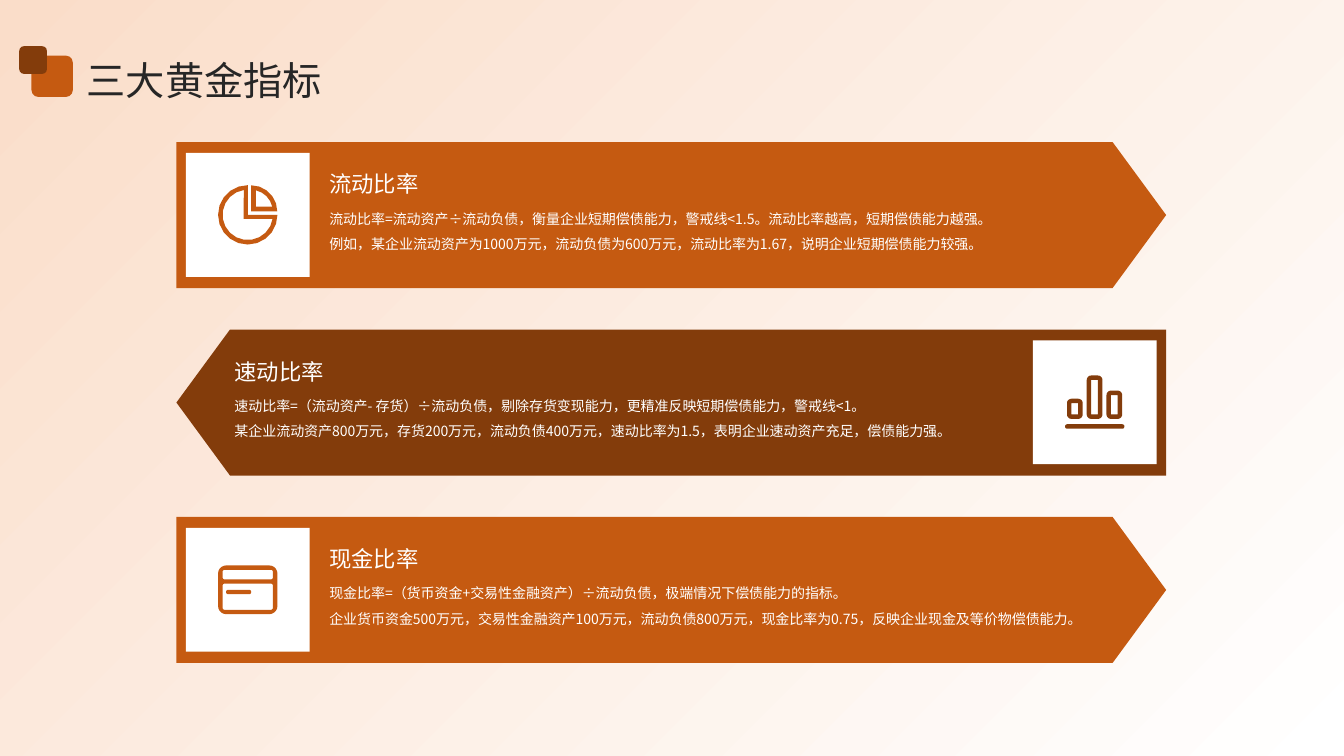
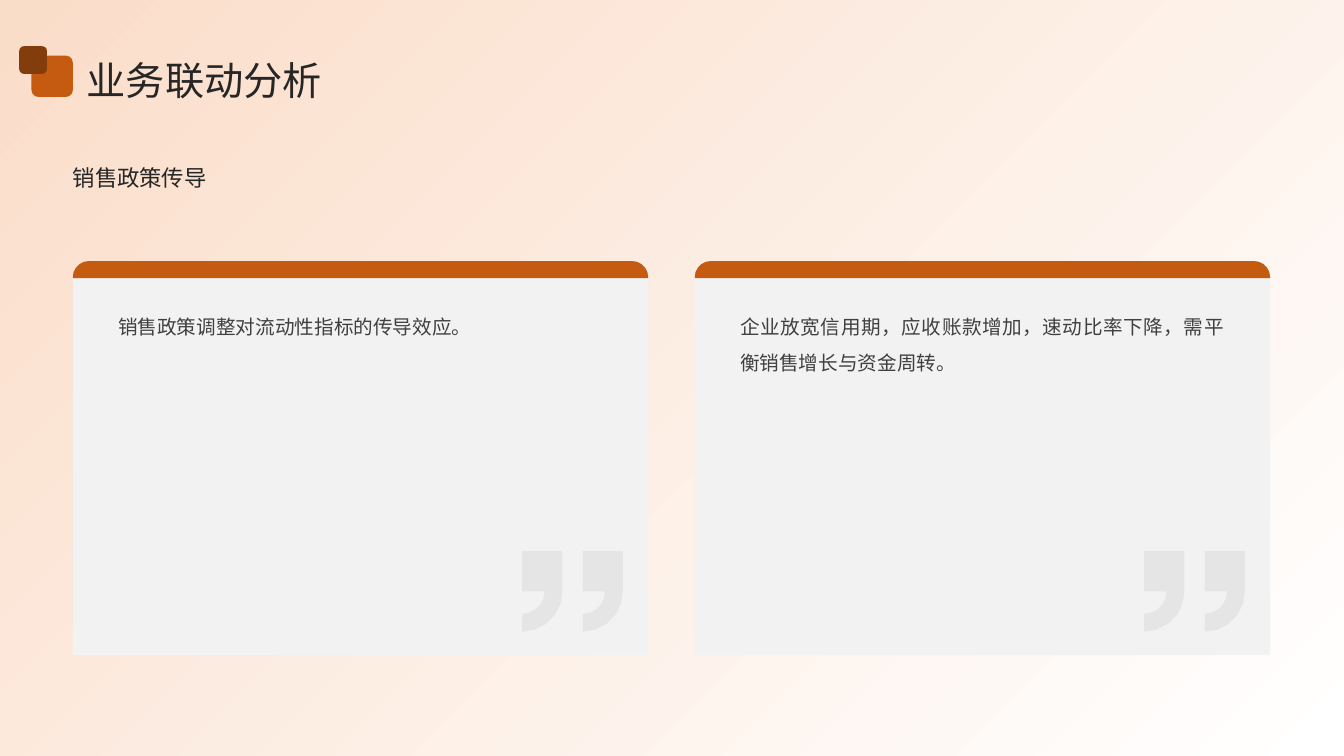
from copy import deepcopy
from math import ceil, cos, radians, sin

from lxml import etree
from pptx import Presentation
from pptx.dml.color import RGBColor
from pptx.enum import shapes, text
from pptx.oxml import ns
from pptx.util import Pt

WHITE = RGBColor(0xFF, 0xFF, 0xFF)
PEACH = RGBColor(0xFA, 0xDD, 0xC9)
ORANGE = RGBColor(0xC5, 0x5A, 0x11)
BROWN = RGBColor(0x83, 0x3C, 0x0B)
INK = RGBColor(0x26, 0x26, 0x26)
GREY = RGBColor(0x40, 0x40, 0x40)
PALE = RGBColor(0xF2, 0xF2, 0xF2)
MARK = RGBColor(0xD9, 0xD9, 0xD9)

FONT = "Noto Sans CJK SC"
WIDE, HIGH = 960, 540
STROKE = 3.2

KIND = shapes.MSO_SHAPE
TOP, MID, LOW = (text.MSO_ANCHOR.TOP, text.MSO_ANCHOR.MIDDLE,
                 text.MSO_ANCHOR.BOTTOM)


def arc(x, y, r, start, end):
    """Points on a circle; angles run clockwise from three o'clock."""
    steps = ceil(abs(end - start) / 18)
    turns = [radians(start + (end - start) * i / steps)
             for i in range(steps + 1)]
    return [(x + r * cos(a), y + r * sin(a)) for a in turns]


def rect(x, y, w, h):
    return [(x, y), (x + w, y), (x + w, y + h), (x, y + h)]


def soft(x, y, w, h, r):
    """Rectangle with round corners."""
    mids = rect(x + r, y + r, w - 2 * r, h - 2 * r)
    return [spot for i, (cx, cy) in enumerate(mids)
            for spot in arc(cx, cy, r, 180 + 90 * i, 270 + 90 * i)]


def pie():
    return [
        [(0, 0)] + arc(0, 0, 21.2, 0, 270),
        [(-2.9, 2.9)] + arc(0, 0, 18, 9, 261),
        [(2.4, -2.4)] + arc(2.4, -2.4, 18.7, 270, 360),
        [(5.8, -5.8)] + arc(2.4, -2.4, 15.5, 283, 347),
    ]


def bars():
    loops = [soft(-21.2, 15.6, 42.4, STROKE, 1.6)]
    for i, top in enumerate((-2.6, -19.2, -8.4)):
        x, w, h = -19.8 + 14.1 * i, 11.2, 11.8 - top
        loops.append(soft(x, top, w, h, 3.2))
        loops.append(rect(x + STROKE, top + STROKE,
                          w - 2 * STROKE, h - 2 * STROKE))
    return loops


def card():
    return [
        soft(-21.2, -17.4, 42.4, 34.8, 5.8),
        soft(-18, -14.3, 36, 6.9, 1.5),
        soft(-18, -4.4, 36, 18.7, 1.5),
        soft(-15.5, 0, 18, STROKE, 1.6),
    ]


class Deck:
    def __init__(self):
        self.file = Presentation()
        self.file.slide_width, self.file.slide_height = Pt(WIDE), Pt(HIGH)
        self.slide = None

    def page(self, title):
        """Start a slide with the shared backdrop, badge and title."""
        self.slide = self.file.slides.add_slide(self.file.slide_layouts[6])
        fill = self.box(0, 0, WIDE, HIGH, WHITE).fill
        fill.gradient()
        fill.gradient_angle = 135
        for stop, color in zip(fill.gradient_stops, (WHITE, PEACH)):
            stop.color.rgb = color
        self.box(22.5, 39.75, 29.5, 29.5, ORANGE, KIND.ROUNDED_RECTANGLE)
        self.box(13.75, 33, 19.75, 19.75, BROWN, KIND.ROUNDED_RECTANGLE)
        self.text(62, 36.75, 840, 36.75, title, 28, INK, 1.1, MID)

    def paint(self, shape, fill, alpha=None):
        shape.shadow.inherit = False
        shape.fill.solid()
        shape.fill.fore_color.rgb = fill
        shape.line.fill.background()
        if alpha:
            color = next(shape.element.spPr.iter(ns.qn("a:srgbClr")))
            etree.SubElement(color, ns.qn("a:alpha"), val=str(alpha * 1000))
        return shape

    def box(self, x, y, w, h, fill, kind=KIND.RECTANGLE):
        shape = self.slide.shapes.add_shape(kind, Pt(x), Pt(y), Pt(w), Pt(h))
        return self.paint(shape, fill)

    def free(self, x, y, loops, fill, alpha=None):
        """One shape of closed loops, given relative to x, y."""
        build = None
        for loop in loops:
            spots = [(Pt(x + px), Pt(y + py)) for px, py in loop]
            if build is None:
                build = self.slide.shapes.build_freeform(*spots[0], scale=1.0)
            else:
                build.move_to(*spots[0])
            build.add_line_segments(spots[1:], close=True)
        return self.paint(build.convert_to_shape(), fill, alpha)

    def text(self, x, y, w, h, words, size, color, space, anchor=TOP,
             align=text.PP_ALIGN.LEFT):
        shape = self.slide.shapes.add_textbox(Pt(x), Pt(y), Pt(w), Pt(h))
        frame = shape.text_frame
        frame.word_wrap = True
        frame.vertical_anchor = anchor
        frame.margin_left = frame.margin_right = 0
        frame.margin_top = frame.margin_bottom = 0
        para = frame.paragraphs[0]
        para.text = words
        para.line_spacing = space
        para.alignment = align
        for run in para.runs:
            run.font.size = Pt(size)
            run.font.name = FONT
            run.font.color.rgb = color
            etree.SubElement(run.font._element, ns.qn("a:ea"), typeface=FONT)
        for gap in para._p.findall(ns.qn("a:br")):
            gap.append(deepcopy(para.runs[0].font._element))

    def arrow(self, y, head, body, icon, color, left=False):
        """Arrow band with an icon tile at its flat end."""
        x, w, tile = 126, 707, 88.5
        band = self.box(x, y, w, 104.25, color, KIND.PENTAGON)
        band.adjustments[0] = 0.367
        band.rotation = 180 if left else 0
        side = x + w - tile - 6.75 if left else x + 6.75
        self.box(side, y + 7.75, tile, tile, WHITE)
        self.free(side + tile / 2, y + 7.75 + tile / 2, icon(), color)
        start = 167.5 if left else 235.25
        self.text(start, y + 7.75, 556.5, 31.75, head, 16, WHITE, 1.3, LOW)
        self.text(start, y + 42.5, 556.5, 54, body, 10, WHITE, 1.5)

    def panel(self, x, words):
        """Quote panel with a rounded tab on top."""
        y, w, r = 198.75, 411, 11.5
        self.box(x, y, w, 269.25, PALE)
        self.text(x + 32.4, y + 18, 345.6, 210, words, 14, GREY, 1.5,
                  align=text.PP_ALIGN.JUSTIFY)
        tab = (arc(r, r, r, 180, 270) + arc(w - r, r, r, 270, 360)
               + [(w, 12.25), (0, 12.25)])
        self.free(x, y - 12.25, [tab], ORANGE)
        quote = ([(0, 0), (0, 28.75)] + arc(0, 28.75, 16, 0, 90)
                 + arc(0, 28.75, 28.75, 90, 0) + [(28.75, 0)])
        for shift in (321, 364.25):
            self.free(x + shift, 393.75, [quote], MARK, alpha=50)


def main():
    deck = Deck()

    deck.page("三大黄金指标")
    ratios = [
        ("流动比率",
         "流动比率=流动资产÷流动负债，衡量企业短期偿债能力，警戒线<1.5。流动比率越高，短期偿债能力越强。\v"
         "例如，某企业流动资产为1000万元，流动负债为600万元，流动比率为1.67，说明企业短期偿债能力较强。",
         pie, ORANGE),
        ("速动比率",
         "速动比率=（流动资产- 存货）÷流动负债，剔除存货变现能力，更精准反映短期偿债能力，警戒线<1。\v"
         "某企业流动资产800万元，存货200万元，流动负债400万元，速动比率为1.5，表明企业速动资产充足，偿债能力强。",
         bars, BROWN, True),
        ("现金比率",
         "现金比率=（货币资金+交易性金融资产）÷流动负债，极端情况下偿债能力的指标。\v"
         "企业货币资金500万元，交易性金融资产100万元，流动负债800万元，现金比率为0.75，反映企业现金及等价物偿债能力。",
         card, ORANGE),
    ]
    for i, ratio in enumerate(ratios):
        deck.arrow(101.5 + 133.9 * i, *ratio)

    deck.page("业务联动分析")
    deck.text(52, 79.5, 693, 85, "销售政策传导", 16, INK, 1.5, MID)
    deck.panel(52, "销售政策调整对流动性指标的传导效应。")
    deck.panel(496.25, "企业放宽信用期，应收账款增加，速动比率下降，需平衡销售增长与资金周转。")

    deck.file.save("out.pptx")


if __name__ == "__main__":
    main()
